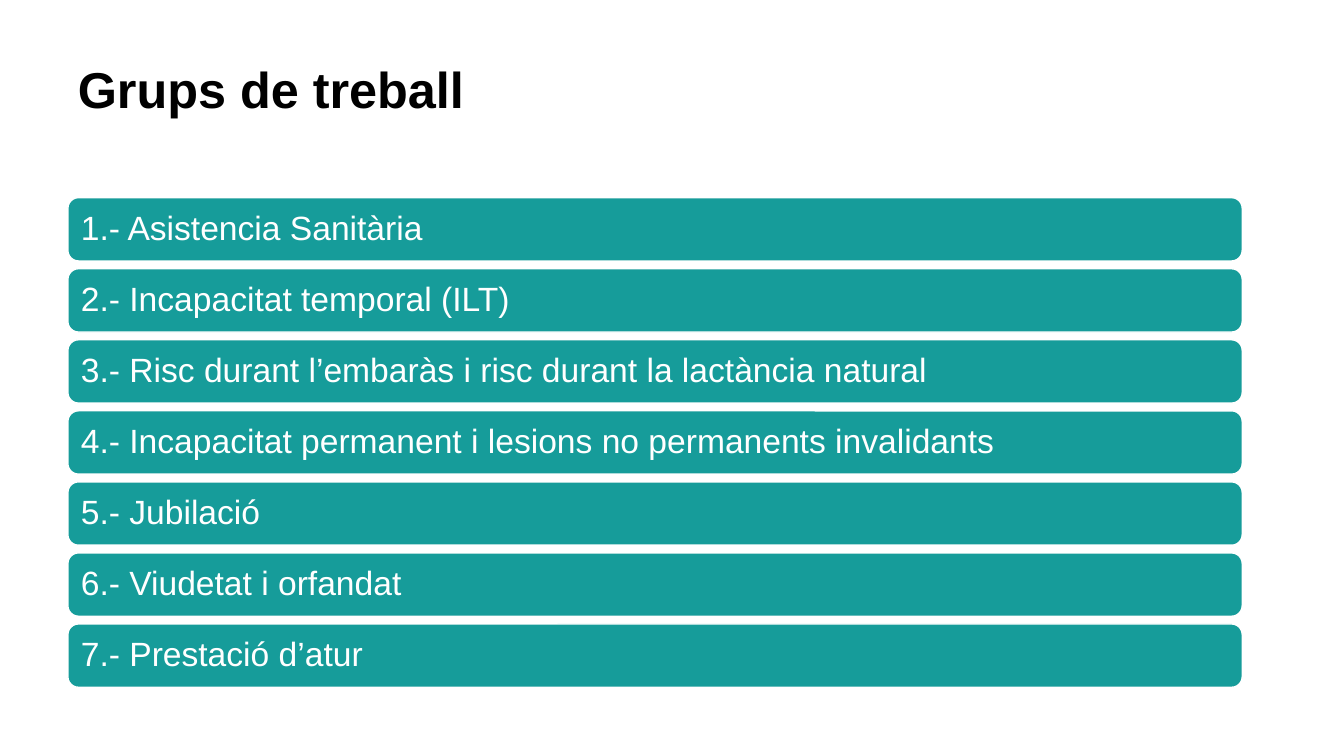
from pptx import Presentation
from pptx.dml.color import RGBColor
from pptx.enum import shapes, text
from pptx.util import Pt


def paint(part, color):
    part.solid()
    part.fore_color.rgb = RGBColor.from_string(color)


def write(shape, words, size, color, bold=False, anchor="TOP", pad=3.6):
    frame = shape.text_frame
    frame.word_wrap = True
    frame.vertical_anchor = text.MSO_ANCHOR[anchor]
    frame.margin_left = frame.margin_right = Pt(7.2)
    frame.margin_top = frame.margin_bottom = Pt(pad)
    para = frame.paragraphs[0]
    para.alignment = text.PP_ALIGN.LEFT
    para.line_spacing = 0.9
    run = para.add_run()
    run.text = words
    run.font.name = "Arial"
    run.font.size = Pt(size)
    run.font.bold = bold
    paint(run.font.fill, color)


deck = Presentation()
deck.slide_width, deck.slide_height = Pt(960), Pt(540)
slide = deck.slides.add_slide(deck.slide_layouts[6])

left, wide = 48.5, 838.8
top, high, step = 141.2, 45.2, 50.75
groups = [
    "Asistencia Sanitària",
    "Incapacitat temporal (ILT)",
    "Risc durant l’embaràs i risc durant la lactància natural",
    "Incapacitat permanent i lesions no permanents invalidants",
    "Jubilació",
    "Viudetat i orfandat",
    "Prestació d’atur",
]

title = slide.shapes.add_textbox(Pt(left), Pt(43.2), Pt(wide), Pt(89.3))
write(title, "Grups de treball", 36, "000000", bold=True)

for row, group in enumerate(groups):
    bar = slide.shapes.add_shape(
        shapes.MSO_SHAPE.ROUNDED_RECTANGLE,
        Pt(left), Pt(top + row * step), Pt(wide), Pt(high))
    bar.shadow.inherit = False
    paint(bar.fill, "169C9A")
    paint(bar.line.fill, "FFFFFF")
    bar.line.width = Pt(1)
    write(bar, f"{row + 1}.- {group}", 24, "FFFFFF", anchor="MIDDLE", pad=7.2)

deck.save("out.pptx")
